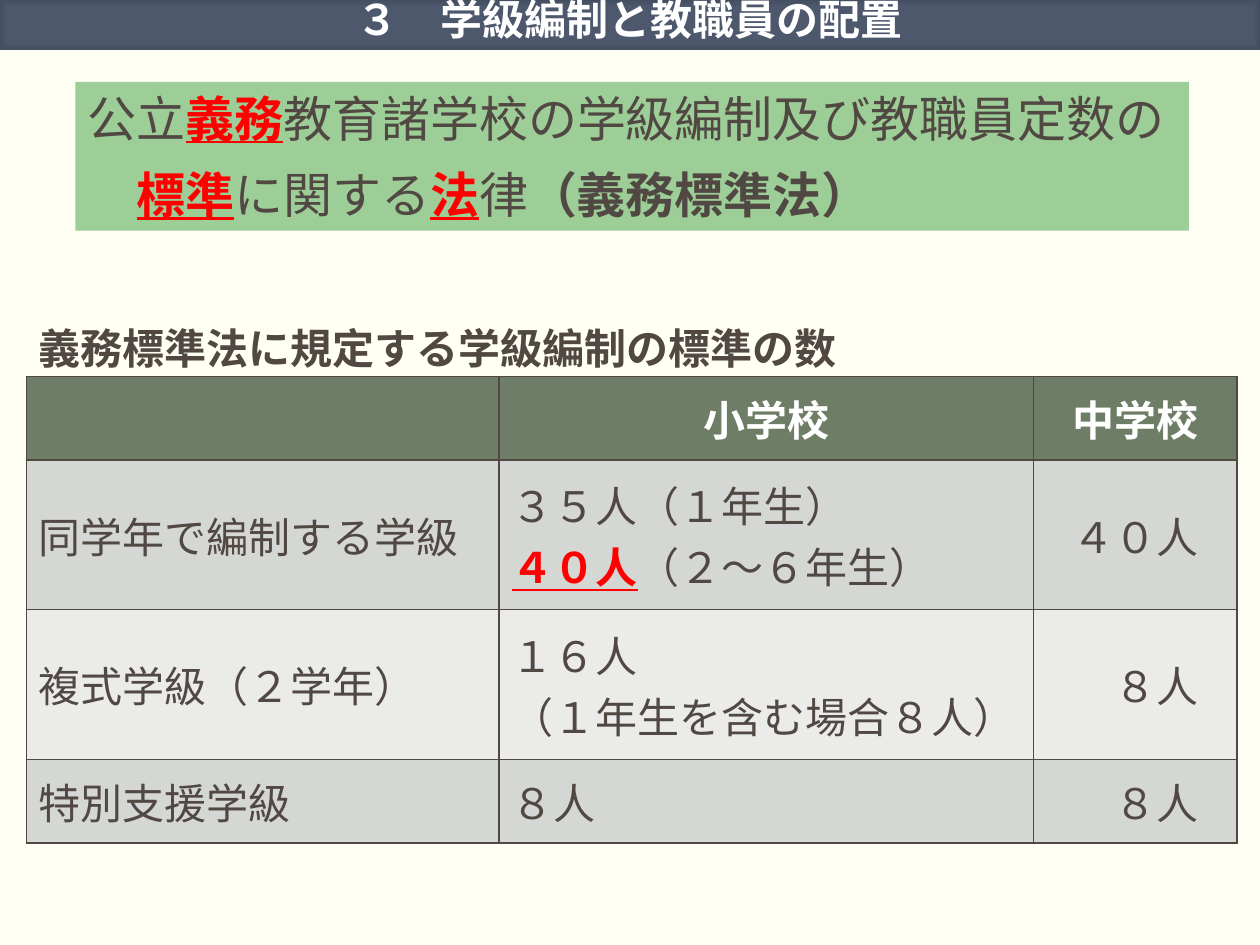
from dataclasses import dataclass

from lxml import etree
from pptx import Presentation
from pptx.dml.color import RGBColor
from pptx.enum.shapes import MSO_SHAPE
from pptx.enum.text import MSO_ANCHOR, PP_ALIGN
from pptx.oxml import parse_xml
from pptx.oxml.ns import nsdecls, qn
from pptx.util import Cm, Pt

RECT = MSO_SHAPE.RECTANGLE
TOP, MIDDLE, BOTTOM = MSO_ANCHOR.TOP, MSO_ANCHOR.MIDDLE, MSO_ANCHOR.BOTTOM
LEFT, CENTER = PP_ALIGN.LEFT, PP_ALIGN.CENTER


@dataclass(frozen=True)
class Theme:
    """Colours, fonts and type sizes of the slide."""
    paper: str = "FFFFF3"
    ink: str = "514843"
    white: str = "FFFFFF"
    accent: str = "FF0000"
    law: str = "339933"
    header: str = "6D7D66"
    bands: tuple = ("D4D7D3", "EBECEA")
    title_stops: tuple = ((0, "4E596E"), (71, "4D586D"), (100, "444E61"))
    cjk: str = "Noto Sans CJK JP"
    heading: str = "Arial"
    body: str = "Quicksand"
    size: int = 24
    law_size: int = 28


T = Theme()
PLAIN = (T.ink, False, False)
BOLD = (T.ink, True, False)
WHITE_BOLD = (T.white, True, False)
KEY = (T.accent, True, True)

LAW_TITLE = [
    [("公立", PLAIN), ("義務", KEY), ("教育諸学校の学級編制及び教職員定数の", PLAIN)],
    [("\u3000".strip("\n"), PLAIN), ("標準", KEY), ("に関する", PLAIN), ("法", KEY),
     ("律", PLAIN), ("（義務標準法）", BOLD)],
]
COLUMNS = (9.53, 10.77, 4.11)
ROWS = (1.68, 3.02, 3.02, 1.68)
HEADER = ("", "小学校", "中学校")
CLASSES = (
    ("同学年で編制する学級",
     [[("３５人（１年生）", PLAIN)], [("４０人", KEY), ("（２～６年生）", PLAIN)]],
     "４０人"),
    ("複式学級（２学年）",
     [[("１６人", PLAIN)], [("（１年生を含む場合８人）", PLAIN)]],
     "　８人"),
    ("特別支援学級", "８人", "　８人"),
)


def write(tf, lines, size, latin, east, align=LEFT, spacing=()):
    """Fill a text frame with lines of (text, style) runs."""
    for i, runs in enumerate(lines):
        p = tf.paragraphs[0] if i == 0 else tf.add_paragraph()
        p.alignment = align
        if i < len(spacing):
            p.line_spacing = spacing[i]
        for text, (color, bold, underline) in runs:
            r = p.add_run()
            r.text = text
            r.font.size, r.font.name = Pt(size), latin
            r.font.bold, r.font.underline = bold, underline
            r.font.color.rgb = RGBColor.from_string(color)
            etree.SubElement(r.font._element, qn("a:ea"), typeface=east)


def add_box(s, box, color, anchor=TOP):
    """Add a borderless filled rectangle and return it."""
    sp = s.shapes.add_shape(RECT, *(Cm(v) for v in box))
    sp.shadow.inherit = False
    sp.fill.solid()
    sp.fill.fore_color.rgb = RGBColor.from_string(color)
    sp.line.fill.background()
    sp.text_frame.vertical_anchor = anchor
    sp.text_frame.word_wrap = True
    return sp


def add_title(s, box):
    """Add the title bar with its gradient towards the edges."""
    sp = add_box(s, box, T.title_stops[0][1], BOTTOM)
    stops = "".join(f'<a:gs pos="{pos * 1000}"><a:srgbClr val="{color}"/></a:gs>'
                    for pos, color in T.title_stops)
    grad = parse_xml(
        f'<a:gradFill {nsdecls("a")} rotWithShape="1"><a:gsLst>{stops}</a:gsLst>'
        '<a:path path="rect"><a:fillToRect l="50000" t="50000" r="50000" b="50000"/>'
        '</a:path></a:gradFill>')
    props = sp._element.spPr
    props.replace(props.find(qn("a:solidFill")), grad)
    tf = sp.text_frame
    tf.margin_left = tf.margin_right = 0
    tf.margin_top = tf.margin_bottom = Cm(0.1)
    write(tf, [[("３　学級編制と教職員の配置", WHITE_BOLD)]],
          T.size, T.cjk, T.cjk, CENTER, (0.9,))


def add_heading(s, box):
    """Add the heading above the table."""
    sp = add_box(s, box, T.paper)
    write(sp.text_frame, [[("義務標準法に規定する学級編制の標準の数", BOLD)]],
          T.size, T.heading, T.heading, spacing=(1.3,))


def add_law(s, box):
    """Add the translucent panel with the name of the law."""
    sp = add_box(s, box, T.law)
    color = sp._element.spPr.find(qn("a:solidFill"))[0]
    etree.SubElement(color, qn("a:alpha"), val="48000")
    sp.text_frame.word_wrap = False
    write(sp.text_frame, LAW_TITLE, T.law_size, T.body, T.body, spacing=(1.0, 1.3))


def fill_cell(cell, content, style, color, align):
    """Write, border and fill one table cell."""
    props = cell._tc.get_or_add_tcPr()
    for side in ("lnL", "lnR", "lnT", "lnB"):
        props.append(parse_xml(
            f'<a:{side} {nsdecls("a")} w="12700"><a:solidFill>'
            f'<a:srgbClr val="{T.ink}"/></a:solidFill></a:{side}>'))
    cell.fill.solid()
    cell.fill.fore_color.rgb = RGBColor.from_string(color)
    cell.vertical_anchor = MIDDLE
    if content:
        lines = [[(content, style)]] if isinstance(content, str) else content
        write(cell.text_frame, lines, T.size, T.body, T.cjk, align)


def add_class_table(s, left, top):
    """Add the table of standard class sizes."""
    table = s.shapes.add_table(len(ROWS), len(COLUMNS), Cm(left), Cm(top),
                               Cm(sum(COLUMNS)), Cm(sum(ROWS))).table
    for column, width in zip(table.columns, COLUMNS):
        column.width = Cm(width)
    for i, values in enumerate((HEADER, *CLASSES)):
        table.rows[i].height = Cm(ROWS[i])
        color = T.bands[(i - 1) % 2] if i else T.header
        for j, content in enumerate(values):
            align = CENTER if i == 0 or j == 2 else LEFT
            fill_cell(table.cell(i, j), content, PLAIN if i else WHITE_BOLD, color, align)


def main():
    """Build and save the slide."""
    prs = Presentation()
    prs.slide_width, prs.slide_height = Cm(25.4), Cm(19.05)
    s = prs.slides.add_slide(prs.slide_layouts[6])
    s.background.fill.solid()
    s.background.fill.fore_color.rgb = RGBColor.from_string(T.paper)
    add_title(s, (0, 0, 25.4, 1))
    add_heading(s, (0.53, 6.07, 20.62, 1.52))
    add_class_table(s, 0.53, 7.59)
    add_law(s, (1.52, 1.65, 22.45, 3))
    prs.save("out.pptx")


if __name__ == "__main__":
    main()
